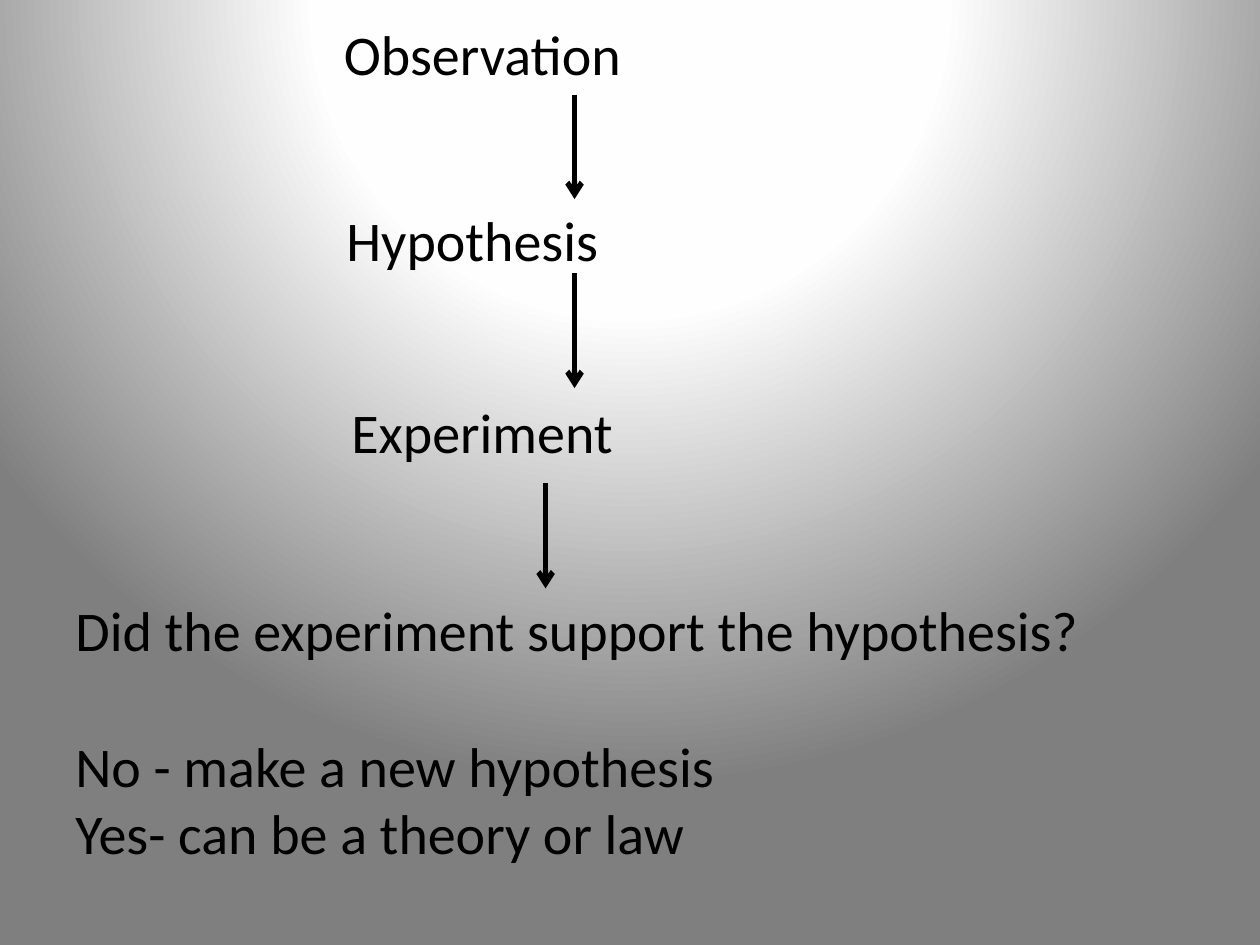
from dataclasses import dataclass
from pptx import Presentation
from pptx.dml.color import RGBColor
from pptx.enum.shapes import MSO_CONNECTOR
from pptx.enum.text import MSO_AUTO_SIZE
from pptx.oxml import parse_xml
from pptx.oxml.ns import nsdecls
from pptx.util import Inches, Pt


@dataclass(frozen=True)
class Theme:
    font: str = "Calibri"
    ink: str = "000000"
    text_size: int = 32
    arrow_width: int = 3
    paragraph_gap: int = 39
    backdrop: tuple = ((0, "FFFFFF"), (40, "FEFEFE"), (100, "7F7F7F"))


class SlideBuilder:
    def __init__(self, page, theme):
        self.page = page
        self.theme = theme
        self.ink = RGBColor.from_string(theme.ink)

    def background(self):
        stops = "".join(
            f'<a:gs pos="{percent * 1000}"><a:srgbClr val="{color}"/></a:gs>'
            for percent, color in self.theme.backdrop
        )
        self.page.element.cSld.insert(0, parse_xml(
            f'<p:bg {nsdecls("p", "a")}><p:bgPr><a:gradFill rotWithShape="1">'
            f'<a:gsLst>{stops}</a:gsLst><a:path path="circle">'
            '<a:fillToRect l="50000" t="-80000" r="50000" b="180000"/>'
            '</a:path></a:gradFill><a:effectLst/></p:bgPr></p:bg>'
        ))

    def text(self, lines, left, top, width, height):
        box = self.page.shapes.add_textbox(
            Inches(left), Inches(top), Inches(width), Inches(height)
        )
        frame = box.text_frame
        frame.word_wrap = True
        frame.auto_size = MSO_AUTO_SIZE.SHAPE_TO_FIT_TEXT
        font_format = {"name": self.theme.font, "size": Pt(self.theme.text_size)}
        for index, line in enumerate(lines):
            para = frame.add_paragraph() if index else frame.paragraphs[0]
            span = para.add_run()
            span.text = line
            for name, value in font_format.items():
                setattr(span.font, name, value)
            span.font.color.rgb = self.ink
        return frame

    def arrow(self, x, top, bottom):
        arrow = self.page.shapes.add_connector(
            MSO_CONNECTOR.STRAIGHT, Inches(x), Inches(top), Inches(x), Inches(bottom)
        )
        arrow.line.color.rgb = self.ink
        arrow.line.width = Pt(self.theme.arrow_width)
        arrow.line._get_or_add_ln().append(
            parse_xml(f'<a:tailEnd {nsdecls("a")} type="arrow"/>')
        )
        arrow.element.spPr.append(parse_xml(f'<a:effectLst {nsdecls("a")}/>'))


def main():
    deck = Presentation()
    deck.slide_width, deck.slide_height = Inches(10), Inches(7.5)
    theme = Theme()
    slide = SlideBuilder(deck.slides.add_slide(deck.slide_layouts[6]), theme)
    slide.background()

    steps = (
        ("Observation", (2.63, 0.11, 3.75), (4.56, 0.75, 1.58)),
        ("Hypothesis", (2.65, 1.58, 2.92), (4.56, 2.17, 3.08)),
        ("Experiment", (2.69, 3.11, 2.9), (4.33, 3.83, 4.67)),
    )
    for label, place, arrow in steps:
        slide.text([label], *place, 0.64)
        slide.arrow(*arrow)

    outcome = slide.text(
        [
            "Did the experiment support the hypothesis?",
            "No - make a new hypothesis",
            "Yes- can be a theory or law",
        ],
        0.5, 4.68, 8.83, 2.26,
    )
    outcome.paragraphs[1].space_before = Pt(theme.paragraph_gap)
    deck.save("out.pptx")


if __name__ == "__main__":
    main()
